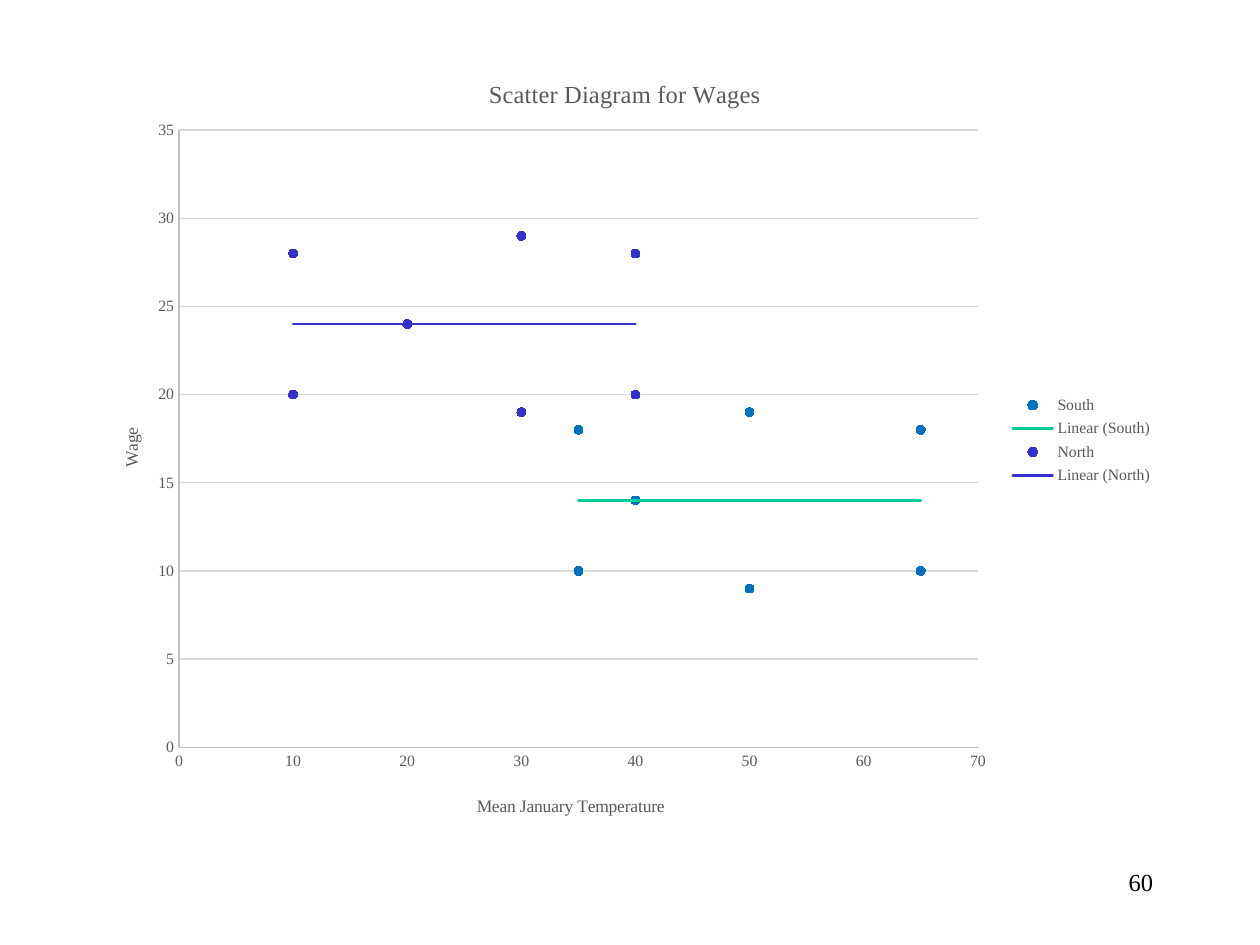
from dataclasses import dataclass

from lxml import etree
from pptx import Presentation
from pptx.chart.data import XyChartData
from pptx.dml.color import RGBColor
from pptx.enum.chart import (XL_CHART_TYPE, XL_LEGEND_POSITION,
                             XL_MARKER_STYLE, XL_TICK_MARK)
from pptx.enum.text import PP_ALIGN
from pptx.oxml import parse_xml
from pptx.oxml.ns import nsdecls, qn
from pptx.util import Inches, Pt

SCATTER = XL_CHART_TYPE.XY_SCATTER
CIRCLE = XL_MARKER_STYLE.CIRCLE
NO_TICK = XL_TICK_MARK.NONE
LEGEND_RIGHT = XL_LEGEND_POSITION.RIGHT
RIGHT = PP_ALIGN.RIGHT


@dataclass(frozen=True)
class Theme:
    face: str = "Times New Roman"
    black: str = "000000"
    gray: str = "595959"
    axis: str = "BFBFBF"
    grid: str = "D9D9D9"
    head: int = 14
    label: int = 10
    tick: int = 9
    hair: float = 0.75
    trend: float = 1.5


@dataclass(frozen=True)
class Region:
    name: str
    color: str
    trend: str
    temps: list[int]
    wages: list[int]


THEME = Theme()
REGIONS = [
    Region("South", "0070C0", "00CC99",
           [35, 35, 40, 50, 50, 65, 65], [18, 10, 14, 19, 9, 18, 10]),
    Region("North", "3333CC", "3333CC",
           [10, 10, 20, 30, 30, 40, 40], [28, 20, 24, 29, 19, 28, 20]),
]


def set_font(font, size: int, color: str) -> None:
    font.name, font.size, font.bold = THEME.face, Pt(size), False
    font.color.rgb = RGBColor.from_string(color)


def set_line(line, color: str) -> None:
    line.width = Pt(THEME.hair)
    line.color.rgb = RGBColor.from_string(color)


def place(item, index: int, **spots: float) -> None:
    """Put a chart part at fractions of the chart's size."""
    for old in item.findall(qn("c:layout")):
        item.remove(old)
    layout = parse_xml(f"<c:layout {nsdecls('c')}><c:manualLayout/></c:layout>")
    manual = layout[0]
    if "w" in spots:
        etree.SubElement(manual, qn("c:layoutTarget")).set("val", "inner")
    for key in ("x", "y"):
        etree.SubElement(manual, qn(f"c:{key}Mode")).set("val", "edge")
    for key, value in spots.items():
        etree.SubElement(manual, qn(f"c:{key}")).set("val", str(value))
    item.insert(index, layout)


def add_title(owner, text: str, size: int, x: float, y: float) -> None:
    owner.has_title = True
    title = owner.chart_title if hasattr(owner, "chart_title") else owner.axis_title
    frame = title.text_frame
    frame.text = text
    set_font(frame.paragraphs[0].runs[0].font, size, THEME.gray)
    place(frame.paragraphs[0]._p.getparent().getparent().getparent(), 1, x=x, y=y)


def style_axis(axis, top: int, step: int) -> None:
    axis.minimum_scale, axis.maximum_scale, axis.major_unit = 0, top, step
    axis.major_tick_mark = axis.minor_tick_mark = NO_TICK
    set_font(axis.tick_labels.font, THEME.tick, THEME.gray)
    set_line(axis.format.line, THEME.axis)


def style_series(series, region: Region) -> None:
    color = RGBColor.from_string(region.color)
    series.format.line.fill.background()
    series.marker.style, series.marker.size = CIRCLE, 5
    series.marker.format.fill.solid()
    series.marker.format.fill.fore_color.rgb = color
    set_line(series.marker.format.line, region.color)
    trend = parse_xml(
        f'<c:trendline {nsdecls("c", "a")}><c:spPr>'
        f'<a:ln w="{Pt(THEME.trend)}" cap="rnd"><a:solidFill>'
        f'<a:srgbClr val="{region.trend}"/></a:solidFill></a:ln></c:spPr>'
        '<c:trendlineType val="linear"/><c:dispRSqr val="0"/>'
        '<c:dispEq val="0"/></c:trendline>')
    series._element.find(qn("c:xVal")).addprevious(trend)


def add_chart(slide, regions: list[Region]) -> None:
    data = XyChartData()
    for region in regions:
        series = data.add_series(region.name)
        for temp, wage in zip(region.temps, region.wages):
            series.add_data_point(temp, wage)
    chart = slide.shapes.add_chart(SCATTER, Inches(0.67), Inches(0.33),
                                   Inches(8.58), Inches(6.33), data).chart
    set_font(chart.font, THEME.label, THEME.black)
    for series, region in zip(chart.plots[0].series, regions):
        style_series(series, region)

    # Axes and grid
    across, up = chart.category_axis, chart.value_axis
    style_axis(across, 70, 10)
    style_axis(up, 35, 5)
    across.has_major_gridlines = False
    up.has_major_gridlines = True
    set_line(up.major_gridlines.format.line, THEME.grid)

    # Titles
    add_title(chart, "Scatter Diagram for Wages", THEME.head, 0.37, 0.04)
    add_title(across, "Mean January Temperature", THEME.label, 0.36, 0.94)
    add_title(up, "Wage", THEME.label, 0.03, 0.48)
    body = up.axis_title.text_frame._txBody.find(qn("a:bodyPr"))
    body.set("rot", "-5400000")
    body.set("vert", "horz")

    # Legend and plot area
    chart.has_legend = True
    chart.legend.position = LEGEND_RIGHT
    chart.legend.include_in_layout = False
    set_font(chart.legend.font, THEME.tick, THEME.gray)
    place(chart._chartSpace.find(".//" + qn("c:plotArea")), 0,
          x=0.0875, y=0.111, w=0.739, h=0.774)


def add_number(slide, text: str) -> None:
    box = slide.shapes.add_textbox(Inches(7.17), Inches(6.83),
                                   Inches(2.08), Inches(0.5))
    frame = box.text_frame
    frame.word_wrap = True
    frame.text = text
    line = frame.paragraphs[0]
    line.alignment = RIGHT
    set_font(line.runs[0].font, THEME.head, THEME.black)


def main() -> None:
    deck = Presentation()
    deck.slide_width, deck.slide_height = Inches(10), Inches(7.5)
    slide = deck.slides.add_slide(deck.slide_layouts[6])
    add_number(slide, "60")
    add_chart(slide, REGIONS)
    deck.save("out.pptx")


if __name__ == "__main__":
    main()
